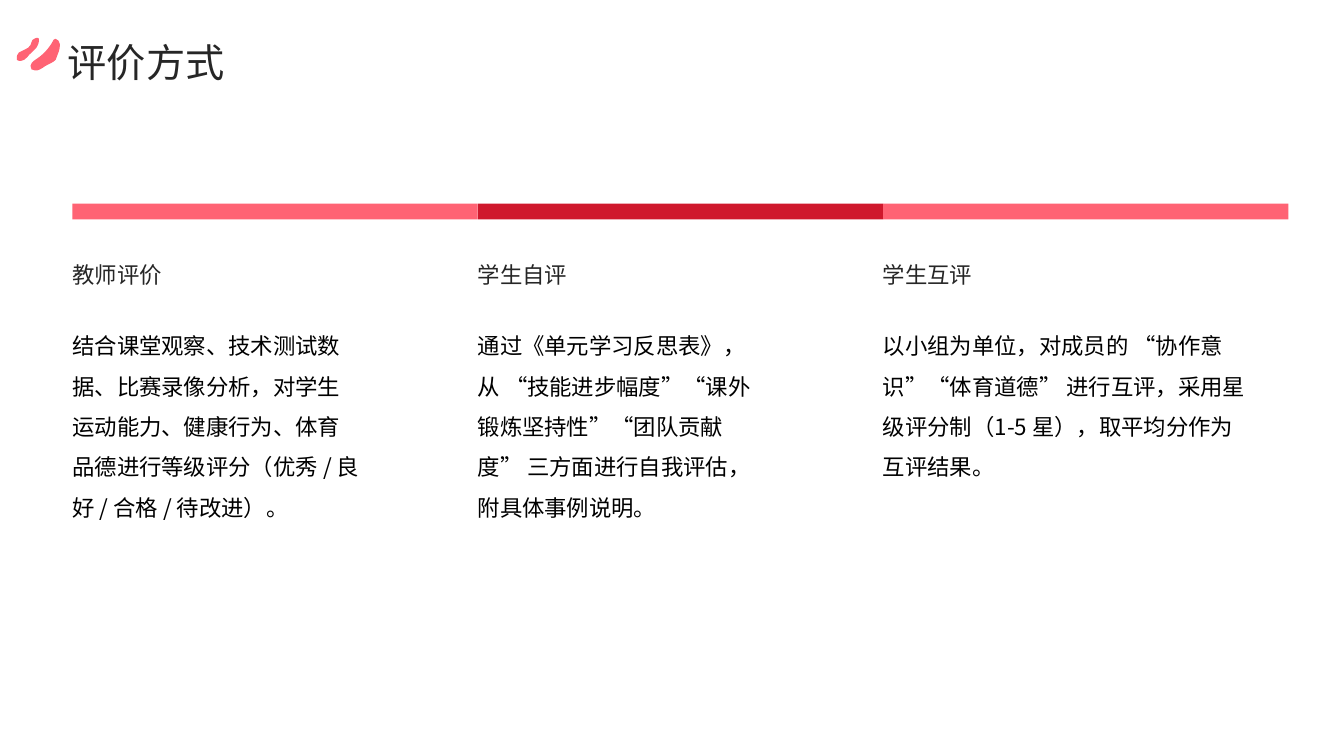
"""Build the slide on the three ways of assessing students."""
from lxml.etree import SubElement
from pptx import Presentation
from pptx.dml.color import RGBColor
from pptx.enum.shapes import MSO_SHAPE
from pptx.enum.text import MSO_ANCHOR, MSO_AUTO_SIZE, PP_ALIGN
from pptx.oxml.ns import qn
from pptx.util import Pt

TITLE = "评价方式"
METHODS = [
    ("教师评价", 275,
     "结合课堂观察、技术测试数据、比赛录像分析，对学生运动能力、健康行为、体育品德进行等级评分（优秀 / 良好 / 合格 / 待改进）。"),
    ("学生自评", 275,
     "通过《单元学习反思表》，从 “技能进步幅度”“课外锻炼坚持性”“团队贡献度” 三方面进行自我评估，附具体事例说明。"),
    ("学生互评", 348,
     "以小组为单位，对成员的 “协作意识”“体育道德” 进行互评，采用星级评分制（1-5 星），取平均分作为互评结果。"),
]
BRUSH_STROKES = [
    [(20, 58), (19, 58), (17, 58), (16, 57), (15, 54), (17, 51), (18, 50),
     (20, 49), (22, 48), (24, 47), (26, 46), (28, 45), (29, 43),
     (30, 41), (30, 39), (31, 38), (33, 36), (35, 36), (36, 36),
     (38, 36), (37, 41), (36, 43), (35, 46), (31, 49), (28, 52),
     (27, 54), (25, 55), (23, 57), (22, 57), (21, 58), (20, 58)],
    [(33, 67), (32, 67), (31, 67), (30, 66), (27, 61), (32, 58), (35, 56),
     (41, 52), (47, 46), (51, 38), (52, 37), (53, 37), (53, 37),
     (55, 37), (57, 40), (57, 42), (57, 44), (57, 47), (56, 49),
     (55, 52), (54, 54), (53, 57), (50, 60), (46, 61), (43, 63),
     (40, 65), (36, 68), (33, 67)],
]

FONT = "Noto Sans CJK SC"
PINK = RGBColor(0xFF, 0x63, 0x74)
RED = RGBColor(0xCF, 0x18, 0x2C)
DARK = RGBColor(0x26, 0x26, 0x26)
BLACK = RGBColor(0, 0, 0)
EMU_PER_PX = 9525
LEFT, COLUMN = 69, 386


def px(*lengths):
    return [length * EMU_PER_PX for length in lengths]


def paint(shape, color):
    shape.shadow.inherit = False
    shape.fill.solid()
    shape.fill.fore_color.rgb = color
    shape.line.fill.background()


def write(shape, text, size, color, spacing, anchor):
    frame = shape.text_frame
    frame.word_wrap = True
    frame.auto_size = MSO_AUTO_SIZE.NONE
    frame.vertical_anchor = anchor
    frame.text = text
    paragraph = frame.paragraphs[0]
    paragraph.alignment = PP_ALIGN.LEFT
    paragraph.line_spacing = spacing
    paragraph.space_before = Pt(0)
    font = paragraph.font
    font.name, font.size, font.color.rgb = FONT, Pt(size), color
    properties = paragraph._p.pPr.find(qn("a:defRPr"))
    SubElement(properties, qn("a:ea"), typeface=FONT)
    return frame


def add_text(slide, box, *style):
    frame = write(slide.shapes.add_textbox(*px(*box)), *style)
    frame.margin_left = frame.margin_right = 0
    frame.margin_top = frame.margin_bottom = 0


def bend_lines(shape):
    """Turn every three straight segments into one cubic curve."""
    lines = list(shape._element.iter(qn("a:lnTo")))
    for first in range(0, len(lines), 3):
        curve, *others = lines[first:first + 3]
        curve.tag = qn("a:cubicBezTo")
        for line in others:
            curve.append(line[0])
            line.getparent().remove(line)


def add_brush_mark(slide):
    first, second = BRUSH_STROKES
    builder = slide.shapes.build_freeform(*first[0], scale=EMU_PER_PX)
    builder.add_line_segments(first[1:-1] + [first[-1]], close=True)
    builder.move_to(*second[0])
    builder.add_line_segments(second[1:], close=True)
    mark = builder.convert_to_shape()
    bend_lines(mark)
    paint(mark, PINK)


def main():
    presentation = Presentation()
    presentation.slide_width, presentation.slide_height = px(1280, 720)
    slide = presentation.slides.add_slide(presentation.slide_layouts[5])

    title = slide.shapes.title
    title.left, title.top, title.width, title.height = px(55, 25, 1140, 54)
    write(title, TITLE, 28, DARK, 1.3, MSO_ANCHOR.MIDDLE)
    add_brush_mark(slide)

    for index, (heading, body_width, body) in enumerate(METHODS):
        left = LEFT + index * COLUMN
        bar = slide.shapes.add_shape(MSO_SHAPE.RECTANGLE, *px(left, 194, COLUMN, 15))
        paint(bar, RED if index % 2 else PINK)
        add_text(slide, (left, 221, 348, 76), heading, 16, DARK, 1.2, MSO_ANCHOR.MIDDLE)
        add_text(slide, (left, 304, body_width, 265), body, 16, BLACK, 1.5, MSO_ANCHOR.TOP)

    presentation.save("out.pptx")


if __name__ == "__main__":
    main()
